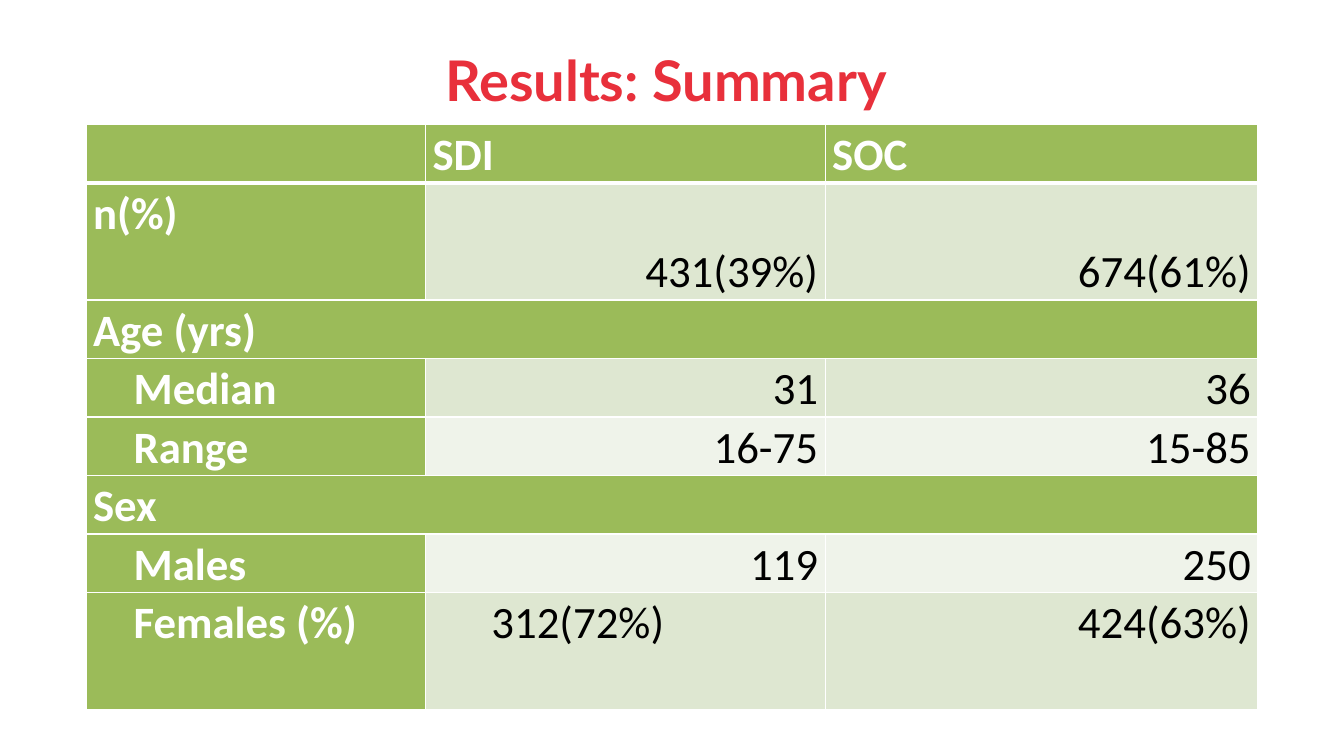
import pptx
import pptx.util
import pptx.dml.color
import pptx.enum.text
import pptx.oxml
import pptx.oxml.ns
from dataclasses import dataclass

Pt = pptx.util.Pt
Align = pptx.enum.text.PP_ALIGN
Anchor = pptx.enum.text.MSO_ANCHOR

TITLE = "Results: Summary "
HEAD = ("", "SDI", "SOC")
# label, values, level, lines high, value fill
BODY = [
    ("n(%)", ("431(39%)", "674(61%)"), 0, 2, "dark"),
    ("Age (yrs)", (), 0, 1, None),
    ("Median", ("31", "36"), 1, 1, "dark"),
    ("Range", ("16-75", "15-85"), 1, 1, "pale"),
    ("Sex", (), 0, 1, None),
    ("Males", ("119", "250"), 1, 1, "pale"),
    ("Females (%)", ("312(72%)", "424(63%)"), 1, 2, "dark"),
]
WIDTHS = (242.5, 285.5, 309)
LEFT, TOP, LINE = 61.5, 88.9, 41.8
PAD, STEP, SHIFT = 5, 29, 110


@dataclass(frozen=True)
class Theme:
    title: str = "E8303B"
    green: str = "9BBB59"
    dark: str = "DEE7D1"
    pale: str = "EFF3EA"
    white: str = "FFFFFF"
    black: str = "000000"
    big: int = 40
    text: int = 32


THEME = Theme()


def color(code):
    return pptx.dml.color.RGBColor.from_string(code)


def style(font, name, size, code, bold):
    font.name, font.size, font.bold = name, Pt(size), bold
    font.color.rgb = color(code)


def edge(cell, base):
    """Draw white cell borders; base is the width of the bottom one."""
    props = cell._tc.get_or_add_tcPr()
    for side, width in (("L", 1), ("R", 1), ("T", 1), ("B", base)):
        props.append(pptx.oxml.parse_xml(
            f'<a:ln{side} {pptx.oxml.ns.nsdecls("a")} w="{int(Pt(width))}">'
            f'<a:solidFill><a:srgbClr val="{THEME.white}"/></a:solidFill>'
            f'</a:ln{side}>'))


def put(cell, text, fill, base=1, value=False, left=PAD, right=PAD):
    edge(cell, base)
    cell.fill.solid()
    cell.fill.fore_color.rgb = color(fill)
    cell.margin_left, cell.margin_right = Pt(left), Pt(right)
    cell.margin_top = cell.margin_bottom = 0
    cell.text_frame.text = text
    para = cell.text_frame.paragraphs[0]
    para.line_spacing = 1.07
    para.alignment = Align.RIGHT if value else Align.LEFT
    ink = THEME.black if value else THEME.white
    for run in para.runs:
        style(run.font, "Calibri", THEME.text, ink, not value)


def add_title(slide):
    box = slide.shapes.add_textbox(Pt(48), Pt(21.6), Pt(864), Pt(70))
    frame = box.text_frame
    frame.word_wrap = True
    frame.vertical_anchor = Anchor.MIDDLE
    frame.text = TITLE
    para = frame.paragraphs[0]
    para.alignment = Align.CENTER
    style(para.runs[0].font, "Lato", THEME.big, THEME.title, True)


def add_grid(slide):
    lines = [1] + [row[3] for row in BODY]
    table = slide.shapes.add_table(
        len(lines), len(WIDTHS), Pt(LEFT), Pt(TOP),
        Pt(sum(WIDTHS)), Pt(LINE * sum(lines))).table
    table.first_row = table.horz_banding = False
    for col, width in zip(table.columns, WIDTHS):
        col.width = Pt(width)
    for row, count in zip(table.rows, lines):
        row.height = Pt(LINE * count)

    for x, text in enumerate(HEAD):
        put(table.cell(0, x), text, THEME.green, base=3)
    for y, (label, values, level, _, tone) in enumerate(BODY, 1):
        put(table.cell(y, 0), label, THEME.green, left=PAD + level * STEP)
        for x, text in enumerate(values, 1):
            inset = PAD + (SHIFT if text == "312(72%)" else 0)
            put(table.cell(y, x), text, getattr(THEME, tone),
                value=True, right=inset)
            if label == "n(%)":
                table.cell(y, x).vertical_anchor = Anchor.BOTTOM
        if not values:
            for x in (1, 2):
                put(table.cell(y, x), "", THEME.green)
            table.cell(y, 0).merge(table.cell(y, 2))


def main():
    deck = pptx.Presentation()
    deck.slide_width, deck.slide_height = Pt(960), Pt(540)
    slide = deck.slides.add_slide(deck.slide_layouts[6])
    add_title(slide)
    add_grid(slide)
    deck.save("out.pptx")


if __name__ == "__main__":
    main()
